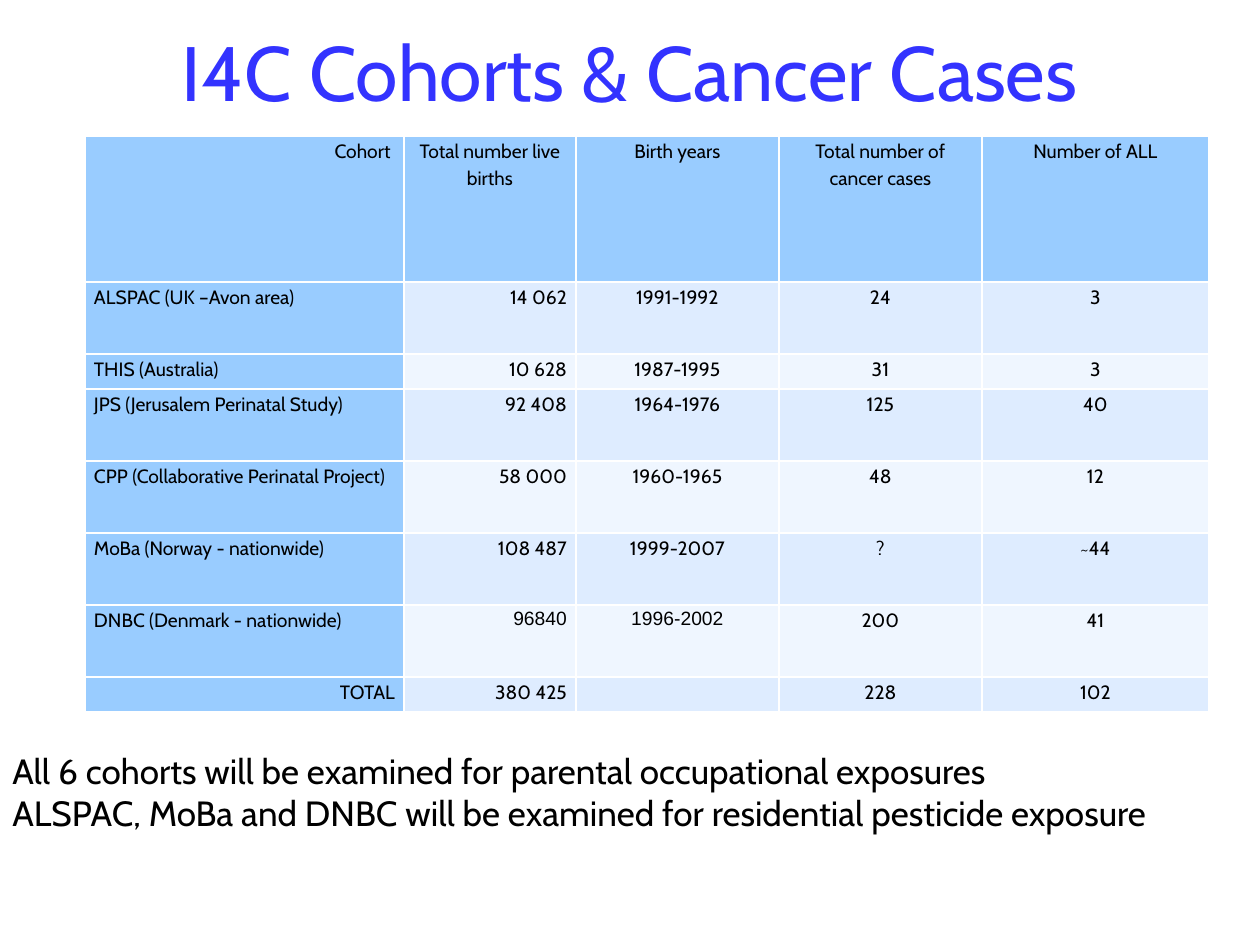
import pptx
import pptx.dml.color
import pptx.enum.text
import pptx.oxml
import pptx.oxml.ns
import pptx.util

PX = pptx.util.Inches(1) / 126
FONT = "Cabin"
COLORS = {
    "title": "3333FF",
    "text": "000000",
    "header": "99CCFF",
    "band_dark": "DEECFF",
    "band_light": "EFF6FF",
    "border": "FFFFFF",
}
ALIGN = pptx.enum.text.PP_ALIGN
ANCHOR = pptx.enum.text.MSO_ANCHOR


def px(length):
    return pptx.util.Emu(round(length * PX))


def write(paragraph, text, size, color, align):
    paragraph.alignment = align
    run = paragraph.add_run()
    run.text = text
    font_format = {"name": FONT, "size": pptx.util.Pt(size), "bold": False}
    for name, value in font_format.items():
        setattr(run.font, name, value)
    run.font.color.rgb = pptx.dml.color.RGBColor.from_string(COLORS[color])
    return run


presentation = pptx.Presentation()
presentation.slide_width, presentation.slide_height = px(1260), px(945)
slide = presentation.slides.add_slide(presentation.slide_layouts[5])

# Title
title = slide.shapes.title
title_box = {"left": 0, "top": 13, "width": 1260, "height": 116}
for name, value in title_box.items():
    setattr(title, name, px(value))
title.text_frame.vertical_anchor = ANCHOR.MIDDLE
write(title.text_frame.paragraphs[0], "I4C Cohorts & Cancer Cases", 44, "title", ALIGN.CENTER)

# Remarks under the table
remarks = slide.shapes.add_textbox(px(0), px(743), px(1260), px(97)).text_frame
remarks.word_wrap = True
remark_lines = [
    "All 6 cohorts will be examined for parental occupational exposures",
    "ALSPAC, MoBa and DNBC will be examined for residential pesticide exposure",
]
for index, line in enumerate(remark_lines):
    paragraph = remarks.add_paragraph() if index else remarks.paragraphs[0]
    write(paragraph, line, 20, "text", ALIGN.LEFT)

# Cohort table
rows = [
    ["Cohort ", "Total number live births", "Birth years", "Total number of cancer cases", "Number of ALL"],
    ["ALSPAC (UK –Avon area)", "14 062", "1991-1992", "24", "3"],
    ["THIS (Australia)", "10 628", "1987-1995", "31", "3"],
    ["JPS (Jerusalem Perinatal Study)", "92 408", "1964-1976", "125", "40"],
    ["CPP (Collaborative Perinatal Project)", "58 000", "1960-1965", "48", "12"],
    ["MoBa (Norway - nationwide)", "108 487", "1999-2007", "?", "~44"],
    ["DNBC (Denmark - nationwide)", "96840", "1996-2002", "200", "41"],
    ["TOTAL", "380 425", "", "228", "102"],
]
column_widths = [319, 172, 203, 203, 227]
row_heights = [146, 72, 35, 72, 72, 72, 72, 35]
right_to_left = {"96840", "1996-2002"}
cell_format = {
    "margin_left": px(9),
    "margin_right": px(9),
    "margin_top": 0,
    "margin_bottom": 0,
    "vertical_anchor": ANCHOR.TOP,
}
table = slide.shapes.add_table(
    len(rows), len(column_widths), px(85), px(136), px(sum(column_widths)), px(sum(row_heights))
).table
table.first_row = table.horz_banding = False
for column, width in zip(table.columns, column_widths):
    column.width = px(width)
for row, height in zip(table.rows, row_heights):
    row.height = px(height)

for row_index, row in enumerate(rows):
    for column_index, text in enumerate(row):
        cell = table.cell(row_index, column_index)
        for name, value in cell_format.items():
            setattr(cell, name, value)

        # Borders, then fill
        properties = cell._tc.get_or_add_tcPr()
        for side in "LRTB":
            properties.append(pptx.oxml.parse_xml(
                f'<a:ln{side} {pptx.oxml.ns.nsdecls("a")} w="12700"><a:solidFill>'
                f'<a:srgbClr val="{COLORS["border"]}"/></a:solidFill></a:ln{side}>'
            ))
        if row_index == 0 or column_index == 0:
            fill = "header"
        else:
            fill = "band_dark" if row_index % 2 else "band_light"
        cell.fill.solid()
        cell.fill.fore_color.rgb = pptx.dml.color.RGBColor.from_string(COLORS[fill])

        # Text
        if column_index == 0:
            align = ALIGN.RIGHT if row_index in (0, len(rows) - 1) else ALIGN.LEFT
        else:
            align = ALIGN.RIGHT if column_index == 1 and row_index else ALIGN.CENTER
        paragraph = cell.text_frame.paragraphs[0]
        paragraph.line_spacing = 1.15
        paragraph.space_after = pptx.util.Pt(10)
        if not text:
            paragraph._p.get_or_add_endParaRPr().set("sz", "1100")
            continue
        run = write(paragraph, text, 11, "text", align)
        if text in right_to_left:
            paragraph._p.get_or_add_pPr().set("rtl", "1")
            run._r.get_or_add_rPr().append(pptx.oxml.parse_xml(
                f'<a:cs {pptx.oxml.ns.nsdecls("a")} typeface="Arial"/>'
            ))

presentation.save("out.pptx")
